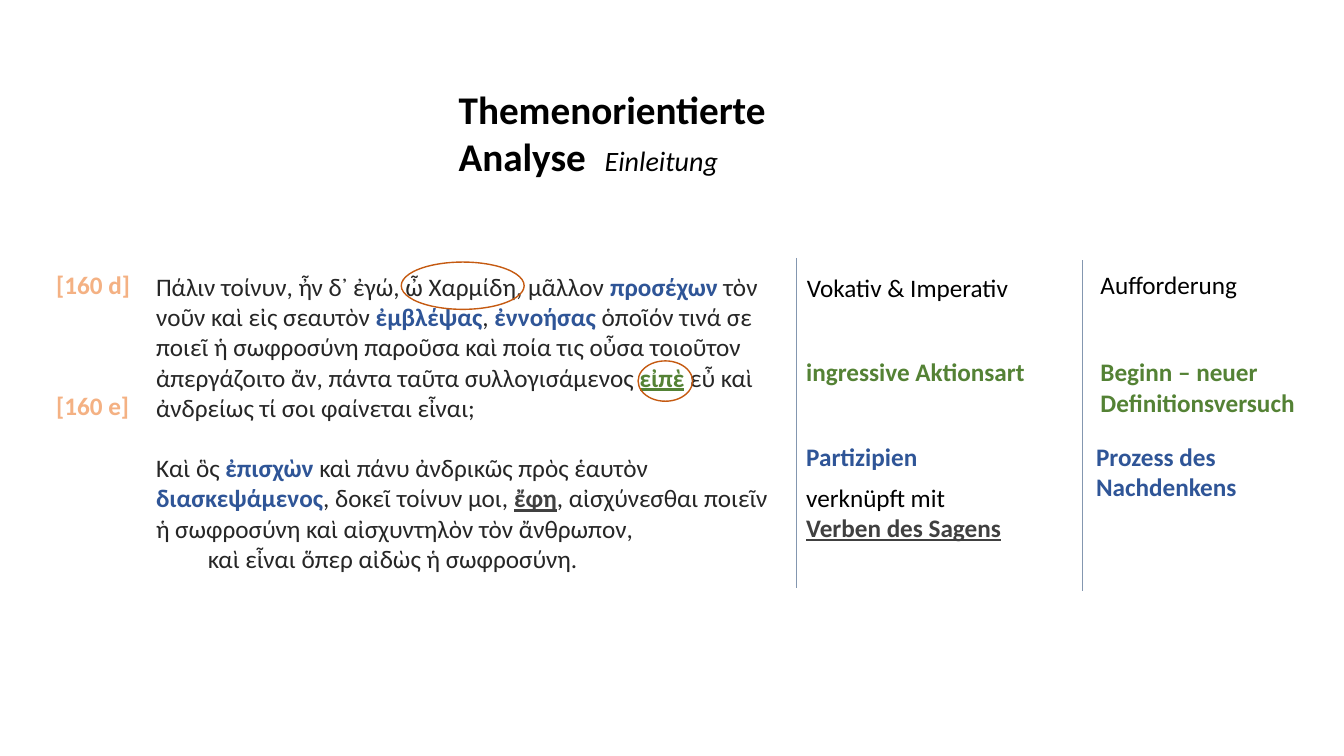
from lxml import etree
from pptx import Presentation
from pptx.dml.color import RGBColor
from pptx.enum.shapes import MSO_CONNECTOR, MSO_SHAPE
from pptx.enum.text import MSO_ANCHOR, MSO_AUTO_SIZE, PP_ALIGN
from pptx.oxml.ns import qn
from pptx.util import Pt

STRAIGHT = MSO_CONNECTOR.STRAIGHT
OVAL = MSO_SHAPE.OVAL
TOP = MSO_ANCHOR.TOP
NO_AUTOFIT = MSO_AUTO_SIZE.NONE
LEFT = PP_ALIGN.LEFT
FONT = "Calibri"
COLORS = {
    "black": "000000", "text": "262626", "blue": "2F5597",
    "green": "548235", "gray": "404040", "label": "F4B183",
    "ring": "C55A11", "rule": "8497B0",
}
STYLES = {
    "title": {"size": 28, "color": "black", "bold": True},
    "subtitle": {"size": 20, "color": "black", "italic": True},
    "plain": {"color": "black"},
    "text": {"color": "text"},
    "label": {"color": "label", "bold": True},
    "participle": {"color": "blue", "bold": True},
    "aspect": {"color": "green", "bold": True},
    "imperative": {"color": "green", "bold": True, "underline": True},
    "speech": {"color": "gray", "bold": True, "underline": True},
}
PASSAGE = [
    [("Πάλιν τοίνυν, ἦν δ᾽ ἐγώ, ὦ Χαρμίδη, μᾶλλον ", "text"),
     ("προσέχων ", "participle"),
     ("τὸν νοῦν καὶ εἰς σεαυτὸν ", "text"),
     ("ἐμβλέψας", "participle"),
     (", ", "text"),
     ("ἐννοήσας ", "participle"),
     ("ὁποῖόν τινά σε ποιεῖ ἡ σωφροσύνη παροῦσα καὶ ποία τις οὖσα τοιοῦτον "
      "ἀπεργάζοιτο ἄν, πάντα ταῦτα συλλογισάμενος ", "text"),
     ("εἰπὲ", "imperative"),
     (" εὖ καὶ ἀνδρείως τί σοι φαίνεται εἶναι;", "text")],
    [("Καὶ ὃς ", "text"),
     ("ἐπισχὼν", "participle"),
     (" καὶ πάνυ ἀνδρικῶς πρὸς ἑαυτὸν ", "text"),
     ("διασκεψάμενος", "participle"),
     (", δοκεῖ τοίνυν μοι, ", "text"),
     ("ἔφη", "speech"),
     (", αἰσχύνεσθαι ποιεῖν ἡ σωφροσύνη καὶ αἰσχυντηλὸν τὸν ἄνθρωπον,", "text")],
    [("καὶ εἶναι ὅπερ αἰδὼς ἡ σωφροσύνη.", "text")],
]
FORMS = [
    (6, 6.5, 175, [[("Vokativ & Imperativ", "plain")]]),
    (0, 67, 194, [[("ingressive Aktionsart", "aspect")]]),
    (0, 127.5, 106, [[("Partizipien", "participle")]]),
    (0, 156.5, 194, [[("verknüpft mit", "plain")], [("Verben des Sagens", "speech")]]),
]
FORMS[0] = (0.5,) + FORMS[0][1:]
FUNCTIONS = [
    (5.7, 3, 142, [[("Aufforderung", "plain")]]),
    (5.7, 65.5, 164, [[("Beginn – neuer Definitionsversuch", "aspect")]]),
    (2.5, 126, 159, [[("Prozess des Nachdenkens", "participle")]]),
]


def color(name):
    """Return the named colour."""
    return RGBColor.from_string(COLORS[name])


def style_run(run, style):
    """Format a run by the name of its style."""
    settings = STYLES[style]
    run.font.name = FONT
    run.font.size = Pt(settings.get("size", 18))
    run.font.color.rgb = color(settings["color"])
    run.font.bold = settings.get("bold", False)
    run.font.italic = settings.get("italic", False)
    run.font.underline = settings.get("underline", False)


def add_text(slide, left, top, width, height, paragraphs):
    """Add a wrapping text box of styled runs and return its frame."""
    shape = slide.shapes.add_textbox(Pt(left), Pt(top), Pt(width), Pt(height))
    frame = shape.text_frame
    frame.word_wrap = True
    for index, runs in enumerate(paragraphs):
        paragraph = frame.add_paragraph() if index else frame.paragraphs[0]
        for text, style in runs:
            run = paragraph.add_run()
            run.text = text
            style_run(run, style)
    return frame


def add_ring(slide, left, top, width, height):
    """Circle a word with an unfilled ellipse."""
    ring = slide.shapes.add_shape(OVAL, Pt(left), Pt(top), Pt(width), Pt(height))
    ring.shadow.inherit = False
    ring.fill.background()
    ring.line.color.rgb = color("ring")
    ring.line.width = Pt(1)


def add_header(slide, left, top, width, height):
    """Place the title and its subtitle."""
    title = slide.shapes.title
    title.left, title.top, title.width, title.height = map(Pt, (left, top, width, height))
    frame = title.text_frame
    frame.text = "Themenorientierte Analyse"
    frame.word_wrap = True
    frame.auto_size = NO_AUTOFIT
    frame.vertical_anchor = TOP
    frame.paragraphs[0].alignment = LEFT
    style_run(frame.paragraphs[0].runs[0], "title")
    add_text(slide, left + 104.4, top + height, 99.4, 31.5, [[("Einleitung", "subtitle")]])


def add_passage(slide, left, top, width, height):
    """Place the Greek passage with its section labels and circled words."""
    for label, offset in (("[160 d]", 0), ("[160 e]", 86.4)):
        add_text(slide, left, top + offset, 72, 29, [[(label, "label")]])
    frame = add_text(slide, left + 71.3, top + 1.5, width - 71.3, height - 1.5, PASSAGE)
    frame.paragraphs[1].space_before = Pt(21.6)
    frame.paragraphs[2]._p.get_or_add_pPr().set("marL", str(Pt(37)))
    add_ring(slide, left + 253.5, top - 1.4, 87.8, 33.8)
    add_ring(slide, left + 422.7, top + 69.2, 38.9, 28.8)


def add_notes_column(slide, left, top, height, notes):
    """Place a vertical rule and the remarks to its right."""
    rule = slide.shapes.add_connector(STRAIGHT, Pt(left), Pt(top), Pt(left), Pt(top + height))
    rule.line.color.rgb = color("rule")
    rule.line.width = Pt(0.5)
    etree.SubElement(rule._element.spPr, qn("a:effectLst"))
    for indent, offset, width, paragraphs in notes:
        add_text(slide, left + indent, top + offset, width, 29, paragraphs)


def main():
    """Build and save the slide."""
    presentation = Presentation()
    presentation.slide_width, presentation.slide_height = Pt(960), Pt(540)
    slide = presentation.slides.add_slide(presentation.slide_layouts[5])
    add_header(slide, 320.4, 57.6, 319.7, 41)
    add_passage(slide, 33.1, 188.6, 527, 227)
    add_notes_column(slide, 568.8, 184.3, 236, FORMS)
    add_notes_column(slide, 773.3, 185.8, 236, FUNCTIONS)
    presentation.save("out.pptx")


if __name__ == "__main__":
    main()
